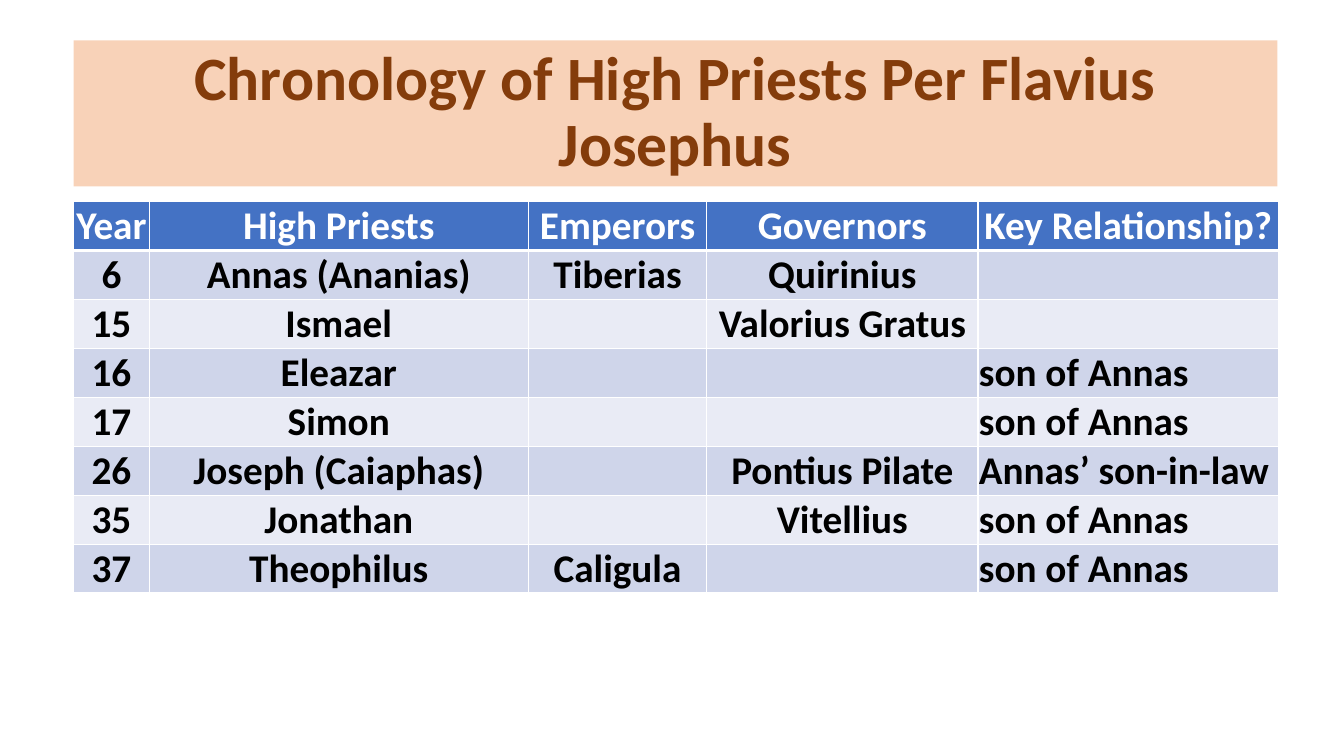
"""Build a slide with a chronology table of high priests."""
import lxml.etree
import pptx
import pptx.dml.color
import pptx.enum.shapes
import pptx.enum.text
import pptx.oxml.ns
import pptx.util

Inches = pptx.util.Inches
RGBColor = pptx.dml.color.RGBColor
ALIGN = pptx.enum.text.PP_ALIGN
MIDDLE = pptx.enum.text.MSO_ANCHOR.MIDDLE

PEACH = RGBColor(0xF4, 0xB1, 0x83)
BROWN = RGBColor(0x84, 0x3C, 0x0B)
BLUE = RGBColor(0x44, 0x72, 0xC4)
DARK_BAND = RGBColor(0xCF, 0xD5, 0xEA)
LIGHT_BAND = RGBColor(0xE9, 0xEB, 0xF5)
WHITE = RGBColor(0xFF, 0xFF, 0xFF)
BLACK = RGBColor(0, 0, 0)

LEFT, WIDTH = Inches(0.73), Inches(11.94)
ROW_HEIGHT = Inches(0.41)
COLUMN_WIDTHS = [0.75, 3.76, 1.77, 2.69, 2.98]
CELL_FORMAT = {
    "margin_left": Inches(0.01),
    "margin_top": Inches(0.01),
    "margin_right": Inches(0.01),
    "margin_bottom": 0,
    "vertical_anchor": MIDDLE,
}
ROWS = [
    ["Year", "High Priests", "Emperors", "Governors", "Key Relationship?"],
    ["6", "Annas (Ananias)", "Tiberias", "Quirinius", ""],
    ["15", "Ismael", "", "Valorius Gratus", ""],
    ["16", "Eleazar", "", "", "son of Annas"],
    ["17", "Simon", "", "", "son of Annas"],
    ["26", "Joseph (Caiaphas)", "", "Pontius Pilate", "Annas’ son-in-law"],
    ["35", "Jonathan", "", "Vitellius", "son of Annas"],
    ["37", "Theophilus", "Caligula", "", "son of Annas"],
]


def write_text(paragraph, text, size, color, alignment):
    paragraph.text = text
    paragraph.alignment = alignment
    font_format = {"name": "Calibri", "size": pptx.util.Pt(size), "bold": True}
    for name, value in font_format.items():
        setattr(paragraph.font, name, value)
        setattr(paragraph.runs[0].font, name, value)
    paragraph.runs[0].font.color.rgb = color


def add_borders(cell, widths):
    properties = cell._tc.get_or_add_tcPr()
    for index, (side, width) in enumerate(widths.items()):
        line = lxml.etree.Element(pptx.oxml.ns.qn(f"a:ln{side}"), w=str(pptx.util.Pt(width)))
        fill = lxml.etree.SubElement(line, pptx.oxml.ns.qn("a:solidFill"))
        lxml.etree.SubElement(fill, pptx.oxml.ns.qn("a:srgbClr"), val=str(WHITE))
        properties.insert(index, line)


presentation = pptx.Presentation()
presentation.slide_width = Inches(13.33)
presentation.slide_height = Inches(7.5)
slide = presentation.slides.add_slide(presentation.slide_layouts[6])

title = slide.shapes.add_shape(
    pptx.enum.shapes.MSO_SHAPE.RECTANGLE, LEFT, Inches(0.4), WIDTH, Inches(1.45)
)
title.shadow.inherit = False
title.line.fill.background()
title.fill.solid()
title.fill.fore_color.rgb = PEACH
title_color = title.fill._xPr.find(".//" + pptx.oxml.ns.qn("a:srgbClr"))
lxml.etree.SubElement(title_color, pptx.oxml.ns.qn("a:alpha"), val="57000")
title.text_frame.word_wrap = True
title.text_frame.vertical_anchor = MIDDLE
title_paragraph = title.text_frame.paragraphs[0]
write_text(title_paragraph, "Chronology of High Priests Per Flavius Josephus", 44, BROWN, ALIGN.CENTER)
title_paragraph.line_spacing = 0.9

table = slide.shapes.add_table(
    len(ROWS), len(COLUMN_WIDTHS), LEFT, Inches(2), WIDTH, ROW_HEIGHT * len(ROWS)
).table
for column, width in zip(table.columns, COLUMN_WIDTHS):
    column.width = Inches(width)

for row_index, row in enumerate(ROWS):
    table.rows[row_index].height = ROW_HEIGHT
    is_header = row_index == 0
    band = BLUE if is_header else DARK_BAND if row_index % 2 else LIGHT_BAND
    borders = {"L": 1, "R": 1, "T": 3 if row_index == 1 else 1, "B": 3 if is_header else 1}
    for column_index, text in enumerate(row):
        cell = table.cell(row_index, column_index)
        for name, value in CELL_FORMAT.items():
            setattr(cell, name, value)
        cell.fill.solid()
        cell.fill.fore_color.rgb = band
        add_borders(cell, borders)
        if text:
            is_relationship = column_index == 4 and not is_header
            write_text(
                cell.text_frame.paragraphs[0],
                text,
                28,
                WHITE if is_header else BLACK,
                ALIGN.LEFT if is_relationship else ALIGN.CENTER,
            )

presentation.save("out.pptx")
